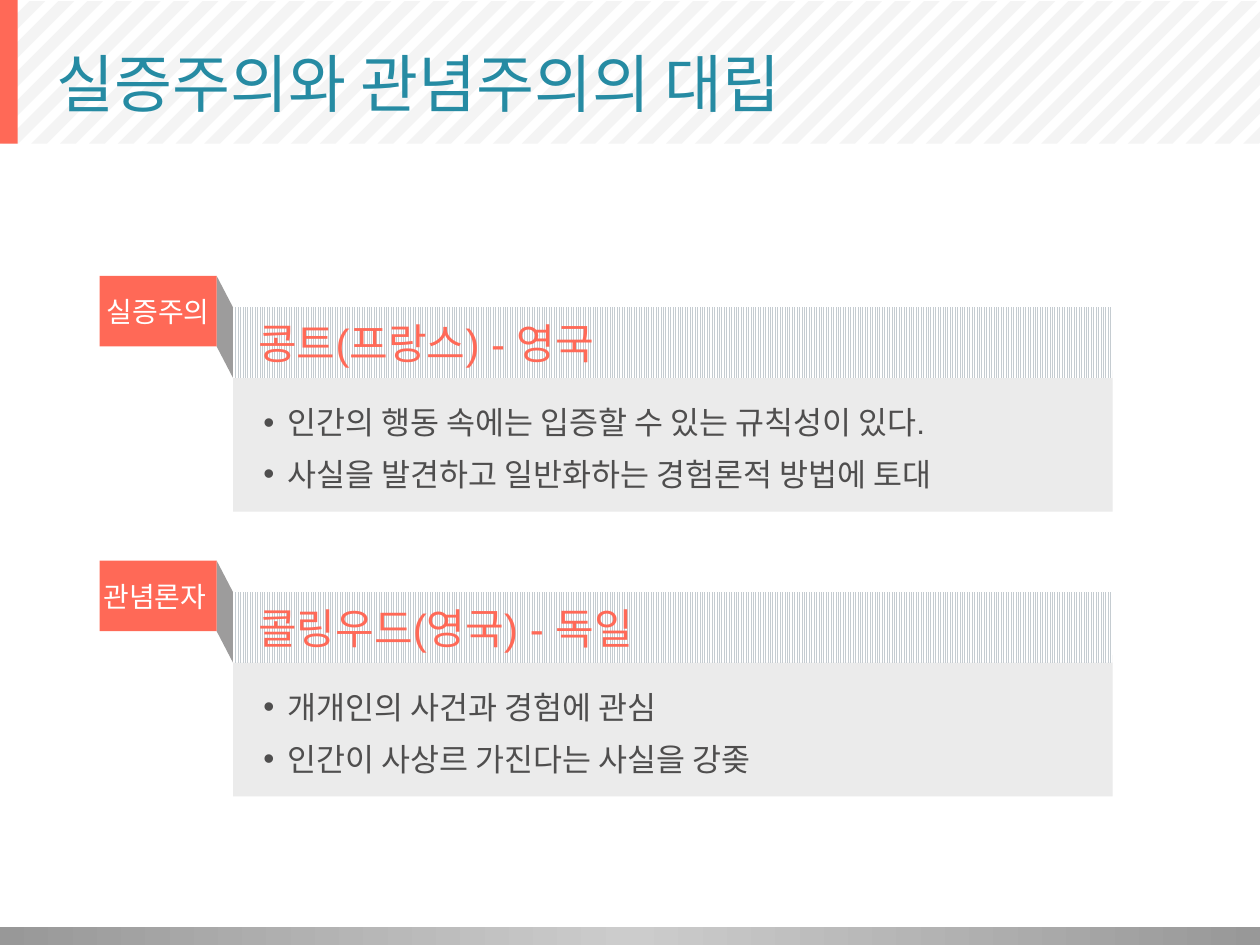
from copy import deepcopy

from lxml import etree
from pptx import Presentation
from pptx.dml.color import RGBColor
from pptx.enum.dml import MSO_PATTERN
from pptx.enum.shapes import MSO_SHAPE
from pptx.enum.text import MSO_ANCHOR, PP_ALIGN
from pptx.oxml.ns import qn
from pptx.util import Inches, Pt

RECT = MSO_SHAPE.RECTANGLE
LIGHT_VERTICAL = MSO_PATTERN.LIGHT_VERTICAL
TOP, MIDDLE = MSO_ANCHOR.TOP, MSO_ANCHOR.MIDDLE
LEFT, CENTER = PP_ALIGN.LEFT, PP_ALIGN.CENTER

CORAL, TEAL, GRAY, DARK = "FF6957", "268BA3", "EBEBEB", "4F4E4E"
WHITE, FOLD, PALE = "FFFFFF", "9D9C9C", "C5CCD1"
BAR_STOPS = [(0, "989898"), (0.5, "CCCCCC"), (1, "989898")]

PANELS = [
    ("실증주의", "콩트(프랑스) - 영국",
     ["인간의 행동 속에는 입증할 수 있는 규칙성이 있다.",
      "사실을 발견하고 일반화하는 경험론적 방법에 토대"]),
    ("관념론자 ", "콜링우드(영국) - 독일",
     ["개개인의 사건과 경험에 관심",
      "인간이 사상르 가진다는 사실을 강좆"]),
]


def rgb(value):
    """Turn a hex string into a colour."""
    return RGBColor.from_string(value)


def set_attrs(obj, values):
    """Set each named attribute of an object."""
    for name, value in values.items():
        setattr(obj, name, value)


def finish(sp, color=None):
    """Remove shadow and outline, and apply a solid fill if given."""
    sp.shadow.inherit = False
    sp.line.fill.background()
    if color:
        sp.fill.solid()
        sp.fill.fore_color.rgb = rgb(color)
    return sp


def add_rect(shapes, x, y, w, h, color=None):
    """Add a plain rectangle."""
    box = [Inches(v) for v in (x, y, w, h)]
    return finish(shapes.add_shape(RECT, *box), color)


def add_polygon(shapes, points, color):
    """Add a closed outline through the points."""
    pts = [(Inches(x), Inches(y)) for x, y in points]
    builder = shapes.build_freeform(*pts[0], scale=1.0)
    builder.add_line_segments(pts[1:], close=True)
    return finish(builder.convert_to_shape(), color)


def add_bullet(p, color):
    """Give a paragraph a hanging round bullet."""
    pPr = p._p.get_or_add_pPr()
    pPr.set("marL", str(Inches(0.19)))
    pPr.set("indent", str(-Inches(0.19)))
    clr = etree.SubElement(pPr, qn("a:buClr"))
    etree.SubElement(clr, qn("a:srgbClr"), val=color)
    etree.SubElement(pPr, qn("a:buFont"), typeface="Arial")
    etree.SubElement(pPr, qn("a:buChar"), char="•")


def write(sp, lines, size, color, frame, para=None, bullets=False):
    """Write lines of text with frame and paragraph formats."""
    tf = sp.text_frame
    set_attrs(tf, frame)
    for i, line in enumerate(lines):
        p = tf.add_paragraph() if i else tf.paragraphs[0]
        set_attrs(p, {"alignment": LEFT, **(para or {})})
        if bullets:
            add_bullet(p, color)
        r = p.add_run()
        r.text = line
        set_attrs(r.font, {"name": "Arial", "size": Pt(size)})
        r.font.color.rgb = rgb(color)


def add_stripes(shapes, x, y, w, h):
    """Fill a band with translucent diagonal stripes cut at its sides."""
    pitch, thick, count = 0.229, 0.125, 49
    for i in range(count):
        outer = x + y + 0.13 + pitch * i
        inner = max(outer - thick, x + y)
        tops = [min(x + w, s - y) for s in (inner, outer)]
        feet = [max(x, s - y - h) for s in (outer, inner)]
        sums = (inner, outer, outer, inner)
        points = [(px, s - px) for px, s in zip(tops + feet, sums)]
        sp = add_polygon(shapes, points, GRAY)
        clr = sp._element.spPr.find(".//" + qn("a:srgbClr"))
        etree.SubElement(clr, qn("a:alpha"), val="52000")


def add_header(shapes, x, y, w, h, title):
    """Place the striped band, its accent and the title."""
    add_stripes(shapes, x, y + 0.01, w, h - 0.01)
    add_rect(shapes, x, y, 0.14, h, CORAL)
    box = [Inches(v) for v in (x + 0.35, y + 0.14, 9.27, 1.03)]
    write(shapes.add_textbox(*box), [title], 36, TEAL,
          {"word_wrap": True, "vertical_anchor": MIDDLE})


def add_footer(shapes, x, y, w, h):
    """Place the gradient bar."""
    fill = add_rect(shapes, x, y, w, h).fill
    fill.gradient()
    fill.gradient_angle = 0
    stops = shapes[-1]._element.spPr.find(".//" + qn("a:gsLst"))
    stops.append(deepcopy(stops[0]))
    for stop, (position, color) in zip(fill.gradient_stops, BAR_STOPS):
        stop.position = position
        stop.color.rgb = rgb(color)


def add_panel(slide, x, y, w, h, tag, heading, points):
    """Place a folded tag, a hatched heading and a bulleted body."""
    shapes = slide.shapes.add_group_shape().shapes
    tag_w, tag_h, drop = 0.93, 0.56, 0.25
    left, edge = x + 1.06, x + tag_w
    body_w, body_y = w - 1.06, y + 0.75

    body = add_rect(shapes, left, body_y, body_w, h - 0.75, GRAY)
    write(body, points, 18, DARK,
          {"word_wrap": True, "vertical_anchor": TOP,
           "margin_left": Inches(0.24), "margin_top": Inches(0.2)},
          {"line_spacing": 1.2, "space_before": Pt(3.6)}, bullets=True)

    add_polygon(shapes, [(left, y + drop), (edge, y), (edge, y + tag_h),
                         (left, y + drop + tag_h)], FOLD)

    label = add_rect(shapes, x, y, tag_w, tag_h, CORAL)
    write(label, [tag], 16, WHITE,
          {"word_wrap": False, "vertical_anchor": MIDDLE},
          {"alignment": CENTER})

    head = add_rect(shapes, left, y + drop, body_w, tag_h)
    head.fill.patterned()
    head.fill.pattern = LIGHT_VERTICAL
    head.fill.fore_color.rgb = rgb(PALE)
    head.fill.back_color.rgb = rgb(WHITE)
    write(head, [heading], 24, CORAL,
          {"word_wrap": False, "vertical_anchor": MIDDLE,
           "margin_left": Inches(0.2)})


def main():
    """Build and save the slide."""
    prs = Presentation()
    prs.slide_width, prs.slide_height = Inches(10), Inches(7.5)
    s = prs.slides.add_slide(prs.slide_layouts[6])
    add_footer(s.shapes, 0, 7.36, 10, 0.14)
    add_header(s.shapes, 0, 0, 10, 1.14, "실증주의와 관념주의의 대립")
    for i, panel in enumerate(PANELS):
        add_panel(s, 0.79, 2.19 + 2.26 * i, 8.04, 1.87, *panel)
    prs.save("out.pptx")


if __name__ == "__main__":
    main()
